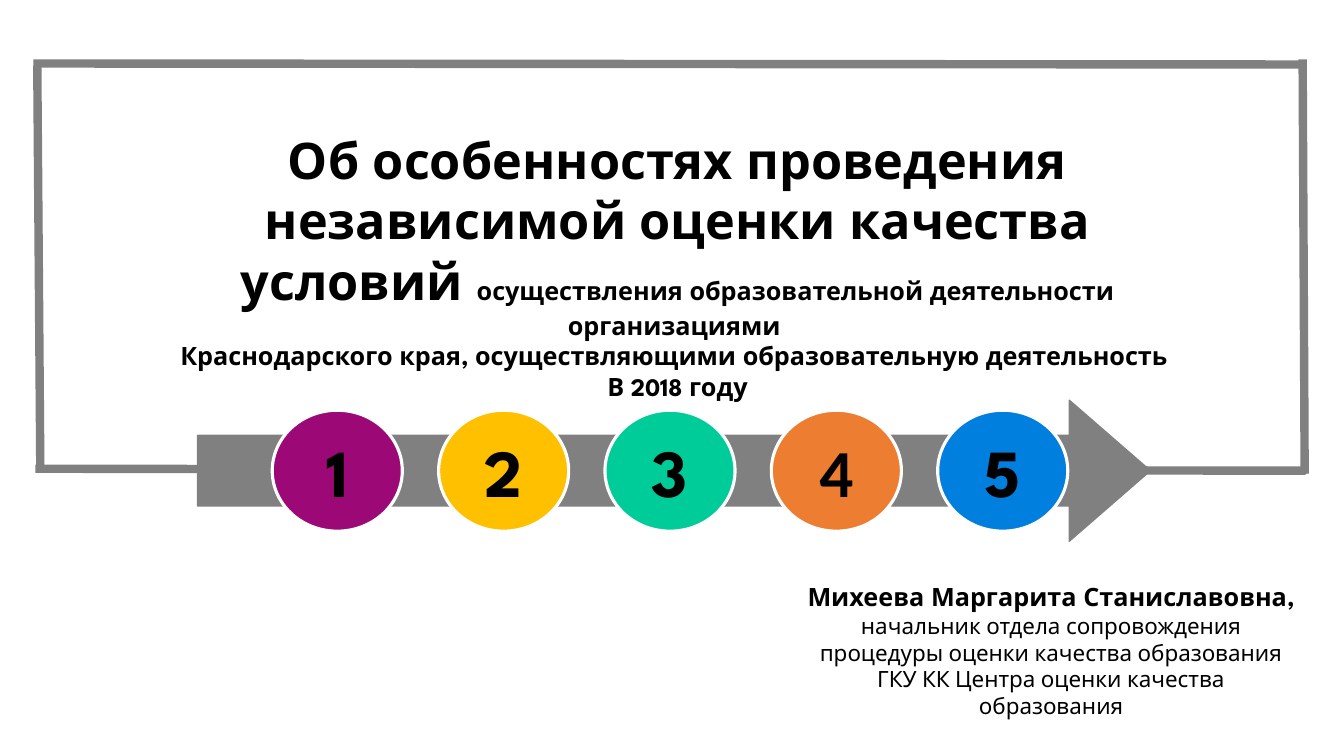
from pptx import Presentation
from pptx import util as u
from pptx.dml.color import RGBColor
from pptx.enum import shapes, text
from pptx.oxml.ns import qn
from lxml import etree

SPARTAN = "League Spartan"
GREY = "808080"
TITLE = [
    [("Об особенностях проведения независимой оценки качества условий ", 36, True),
     ("осуществления образовательной деятельности организациями ", 18, True)],
    [("Краснодарского края, осуществляющими образовательную деятельность ", 18, True)],
    [("В 2018 году", 18, True)],
]
SPEAKER = [
    [("Михеева Маргарита Станиславовна,", 18, True)],
    [("начальник отдела сопровождения процедуры оценки качества образования", 16, False)],
    [("ГКУ КК Центра оценки качества образования", 16, False)],
]
STEPS = [("9C0875", SPARTAN), ("FFC000", SPARTAN), ("00CC99", SPARTAN),
         ("ED7D31", "Calibri"), ("007FDE", SPARTAN)]


def paint(target, color):
    """Give a fill, line or font colour as a hex string."""
    if hasattr(target, "solid"):
        target.solid()
        target.fore_color.rgb = RGBColor.from_string(color)
    elif hasattr(target, "fill") and not hasattr(target, "bold"):
        paint(target.fill, color)
    else:
        target.color.rgb = RGBColor.from_string(color)


def add_run(paragraph, words, size, bold=True, font=SPARTAN):
    """Add one black run to a paragraph."""
    run = paragraph.add_run()
    run.text = words
    run.font.name, run.font.size, run.font.bold = font, u.Pt(size), bold
    paint(run.font, "000000")


def fill_placeholder(holder, box, paragraphs):
    """Move a placeholder to its box and write centred paragraphs in it."""
    holder.left, holder.top, holder.width, holder.height = map(u.Inches, box)
    frame = holder.text_frame
    frame.word_wrap = True
    frame.auto_size = text.MSO_AUTO_SIZE.NONE
    frame.vertical_anchor = text.MSO_ANCHOR.TOP
    for index, runs in enumerate(paragraphs):
        paragraph = frame.add_paragraph() if index else frame.paragraphs[0]
        paragraph.alignment = text.PP_ALIGN.CENTER
        paragraph.space_before = u.Pt(0)
        for words, size, bold in runs:
            add_run(paragraph, words, size, bold)


def draw_frame(slide, left, top, right, bottom):
    """Draw the four slightly slanted strokes of the frame."""
    strokes = [
        (left, bottom, right, bottom + 0.02),
        (left + 0.02, top + 0.02, left + 0.05, bottom - 0.02),
        (left - 0.02, top, right, top + 0.01),
        (right - 0.03, top - 0.04, right - 0.01, bottom + 0.05),
    ]
    for ends in strokes:
        stroke = slide.shapes.add_connector(
            shapes.MSO_CONNECTOR.STRAIGHT, *map(u.Inches, ends))
        paint(stroke.line, GREY)
        stroke.line.width = u.Pt(6)
        etree.SubElement(stroke._element.spPr, qn("a:effectLst"))


def add_figure(slide, kind, box, fill, outline, weight):
    """Add a filled and outlined shape without shadow."""
    figure = slide.shapes.add_shape(kind, *map(u.Inches, box))
    figure.shadow.inherit = False
    paint(figure.fill, fill)
    paint(figure.line, outline)
    figure.line.width = u.Pt(weight)
    return figure


def draw_steps(slide, left, top, width, height):
    """Draw the arrow and the numbered circles along it."""
    arrow = add_figure(slide, shapes.MSO_SHAPE.RIGHT_ARROW,
                       (left, top, width, height), GREY, GREY, 1)
    arrow.adjustments[0], arrow.adjustments[1] = 0.5, 0.575
    for index, (color, font) in enumerate(STEPS):
        box = (left + 0.74 + 1.65 * index, top + 0.1, 1.29, 1.2)
        step = add_figure(slide, shapes.MSO_SHAPE.OVAL, box, color, "FFFFFF", 2.25)
        step.text_frame.vertical_anchor = text.MSO_ANCHOR.MIDDLE
        number = step.text_frame.paragraphs[0]
        number.alignment = text.PP_ALIGN.CENTER
        add_run(number, str(index + 1), 48, font=font)


def main():
    """Build the title slide and save it."""
    deck = Presentation()
    deck.slide_width, deck.slide_height = u.Inches(13.33), u.Inches(7.5)
    slide = deck.slides.add_slide(deck.slide_layouts[0])
    paint(slide.background.fill, "FFFFFF")
    fill_placeholder(slide.shapes.title, (1.47, 1.23, 10.5, 2.22), TITLE)
    fill_placeholder(slide.placeholders[1], (7.89, 5.72, 5.07, 1.48), SPEAKER)
    draw_frame(slide, 0.35, 0.63, 12.95, 4.65)
    draw_steps(slide, 1.96, 3.97, 9.45, 1.4)
    deck.save("out.pptx")


if __name__ == "__main__":
    main()
